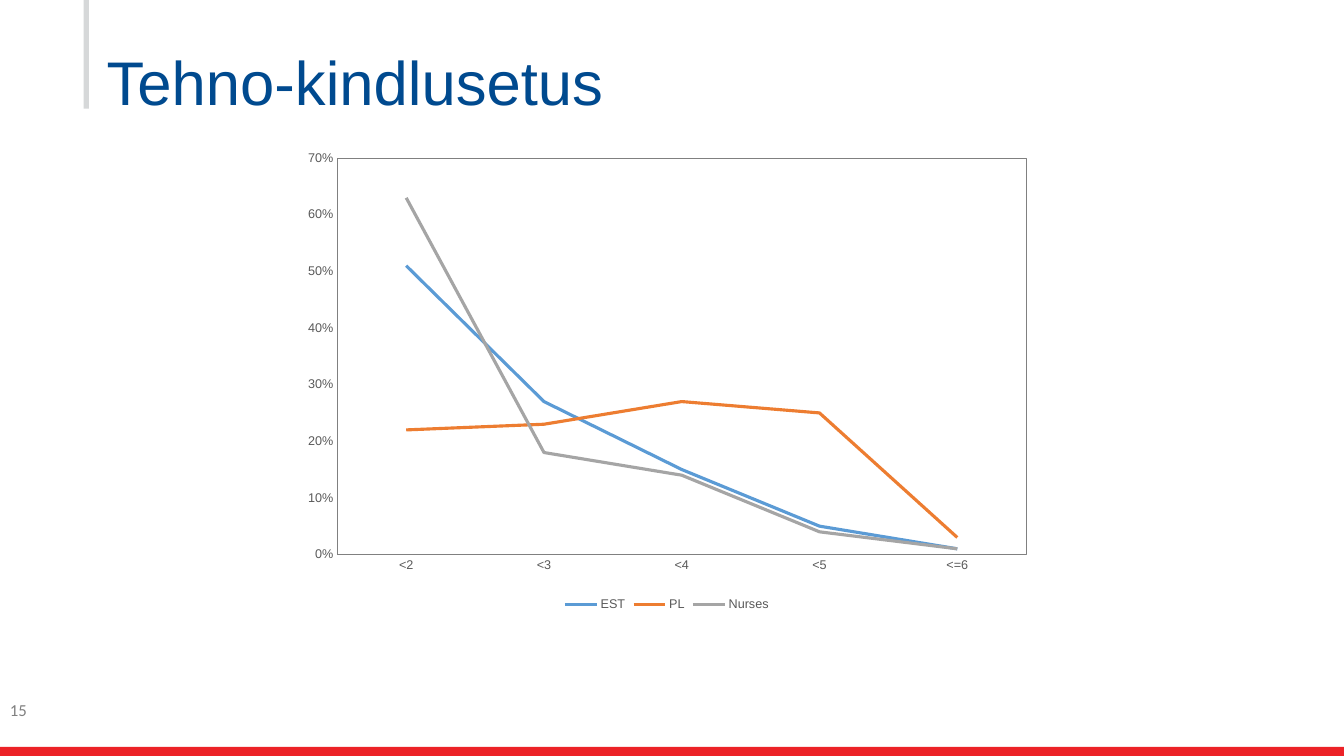
import pptx
import pptx.chart.data
import pptx.dml.color
import pptx.enum.chart
import pptx.enum.shapes
import pptx.oxml
import pptx.oxml.ns
import pptx.util
from pptx.util import Cm

COLORS = {
    "title": "004A8F", "red": "EC2227", "rule": "D6D8D9", "grey": "808080",
    "label": "595959", "EST": "5B9BD5", "PL": "ED7D31", "Nurses": "A5A5A5",
}
CATEGORIES = ["<2", "<3", "<4", "<5", "<=6"]
SERIES = {
    "EST": [0.51, 0.27, 0.15, 0.05, 0.01],
    "PL": [0.22, 0.23, 0.27, 0.25, 0.03],
    "Nurses": [0.63, 0.18, 0.14, 0.04, 0.01],
}
PLOT_XML = (
    '<c:layout %s><c:manualLayout><c:layoutTarget val="inner"/>'
    '<c:xMode val="edge"/><c:yMode val="edge"/><c:x val="0.06"/>'
    '<c:y val="0.03"/><c:w val="0.92"/><c:h val="0.84"/>'
    '</c:manualLayout></c:layout>' % pptx.oxml.ns.nsdecls("c")
)
FRAME_XML = (
    '<c:spPr %s><a:noFill/><a:ln w="9525"><a:solidFill><a:srgbClr val="%s"/>'
    '</a:solidFill></a:ln></c:spPr>' % (pptx.oxml.ns.nsdecls("c", "a"), COLORS["grey"])
)


class SlideBuilder:
    def __init__(self, slide):
        self.slide = slide

    def rgb(self, name):
        return pptx.dml.color.RGBColor.from_string(COLORS[name])

    def style(self, font, size, color, face="Arial"):
        font.size = pptx.util.Pt(size)
        font.name = face
        font.color.rgb = self.rgb(color)

    def bar(self, left, top, width, height, color):
        sp = self.slide.shapes.add_shape(
            pptx.enum.shapes.MSO_SHAPE.RECTANGLE,
            Cm(left), Cm(top), Cm(width), Cm(height))
        sp.shadow.inherit = False
        sp.fill.solid()
        sp.fill.fore_color.rgb = self.rgb(color)
        sp.line.fill.background()

    def text(self, left, top, width, height, text, size, color,
             face="Arial", spacing=1.0, margin_top=0.13):
        tf = self.slide.shapes.add_textbox(
            Cm(left), Cm(top), Cm(width), Cm(height)).text_frame
        tf.word_wrap = True
        tf.margin_top = Cm(margin_top)
        p = tf.paragraphs[0]
        p.text = text
        p.line_spacing = spacing
        self.style(p.font, size, color, face)

    def line_chart(self, left, top, width, height, categories, series):
        data = pptx.chart.data.CategoryChartData(number_format="0%")
        data.categories = categories
        for name, values in series.items():
            data.add_series(name, values)
        chart = self.slide.shapes.add_chart(
            pptx.enum.chart.XL_CHART_TYPE.LINE,
            Cm(left), Cm(top), Cm(width), Cm(height), data).chart
        chart.has_title = False
        self.style(chart.font, 9, "label")
        chart.has_legend = True
        chart.legend.position = pptx.enum.chart.XL_LEGEND_POSITION.BOTTOM
        chart.legend.include_in_layout = False
        self.style(chart.legend.font, 9, "label")

        for axis in (chart.category_axis, chart.value_axis):
            axis.has_major_gridlines = False
            axis.major_tick_mark = pptx.enum.chart.XL_TICK_MARK.NONE
            axis.minor_tick_mark = pptx.enum.chart.XL_TICK_MARK.NONE
            self.style(axis.tick_labels.font, 9, "label")
        line = chart.category_axis.format.line
        line.color.rgb = self.rgb("grey")
        line.width = pptx.util.Pt(0.75)
        axis = chart.value_axis
        axis.format.line.fill.background()
        axis.minimum_scale, axis.maximum_scale, axis.major_unit = 0, 0.7, 0.1
        axis.tick_labels.number_format = "0%"
        axis.tick_labels.number_format_is_linked = False

        plot = chart.plots[0]
        plot.vary_by_categories = False
        for s in plot.series:
            s.smooth = False
            s.marker.style = pptx.enum.chart.XL_MARKER_STYLE.NONE
            s.format.line.color.rgb = self.rgb(s.name)
            s.format.line.width = pptx.util.Pt(2.25)

        area = chart.element.find(".//" + pptx.oxml.ns.qn("c:plotArea"))
        for layout in area.findall(pptx.oxml.ns.qn("c:layout")):
            area.remove(layout)
        area.insert(0, pptx.oxml.parse_xml(PLOT_XML))
        area.append(pptx.oxml.parse_xml(FRAME_XML))


def main():
    prs = pptx.Presentation()
    prs.slide_width, prs.slide_height = Cm(33.87), Cm(19.05)
    s = SlideBuilder(prs.slides.add_slide(prs.slide_layouts[6]))
    s.bar(2.11, 0, 0.13, 2.74, "rule")
    s.bar(0, 18.82, 33.87, 0.23, "red")
    s.text(2.44, 1.07, 29.21, 2.57, "Tehno-kindlusetus", 44, "title",
           spacing=0.9, margin_top=0.25)
    s.text(0, 17.5, 7.62, 1.02, "15", 12, "grey", face="Calibri")
    s.line_chart(7.37, 3.63, 18.87, 11.89, CATEGORIES, SERIES)
    prs.save("out.pptx")


if __name__ == "__main__":
    main()
